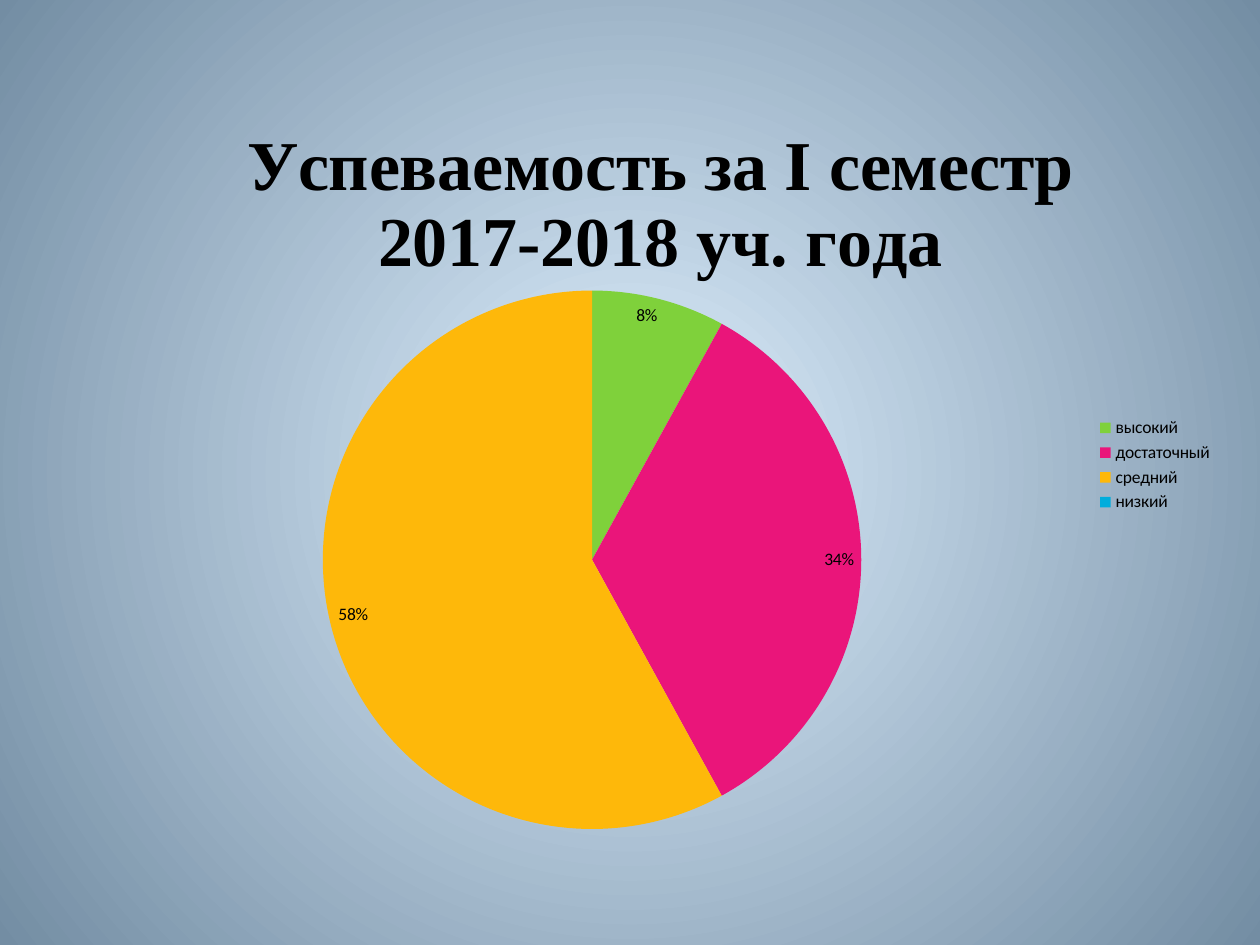
from dataclasses import dataclass

from lxml import etree
from pptx import Presentation
from pptx.chart.data import CategoryChartData
from pptx.dml.color import RGBColor
from pptx.enum.chart import XL_CHART_TYPE, XL_LABEL_POSITION, XL_LEGEND_POSITION
from pptx.oxml import parse_xml
from pptx.oxml.ns import nsdecls, qn
from pptx.util import Cm, Pt

PIE = XL_CHART_TYPE.PIE
INSIDE_END = XL_LABEL_POSITION.INSIDE_END
LEGEND_RIGHT = XL_LEGEND_POSITION.RIGHT

HEADING = "Успеваемость за І семестр 2017-2018 уч. года"
LEVELS = {"высокий ": 8, "достаточный": 34, "средний ": 58, "низкий": 0}


@dataclass(frozen=True)
class Theme:
    text: str = "000000"
    glow: str = "DFF0FF"
    edge: str = "738DA3"
    levels: tuple = ("7FD13B", "EA157A", "FEB80A", "00ADDC")
    body_font: str = "Calibri"
    heading_font: str = "Times New Roman"
    body_size: int = 10
    heading_size: int = 40


THEME = Theme()


def style_font(font, family, size, bold=False):
    font.name = family
    font.size = Pt(size)
    font.bold = bold
    font.color.rgb = RGBColor.from_string(THEME.text)


def paint_background(slide):
    fill = slide.background.fill
    fill.solid()
    properties = slide.element.cSld.find(qn("p:bg")).find(qn("p:bgPr"))
    gradient = parse_xml(
        f'<a:gradFill {nsdecls("a")} rotWithShape="1"><a:gsLst>'
        f'<a:gs pos="0"><a:srgbClr val="{THEME.glow}"/></a:gs>'
        f'<a:gs pos="100000"><a:srgbClr val="{THEME.edge}"/></a:gs></a:gsLst>'
        '<a:path path="circle"><a:fillToRect l="50000" t="50000" r="50000" b="50000"/>'
        '</a:path></a:gradFill>'
    )
    properties.replace(properties.find(qn("a:solidFill")), gradient)


def add_heading(chart):
    chart.has_title = True
    heading = chart.chart_title.text_frame.paragraphs[0].add_run()
    heading.text = HEADING
    style_font(heading.font, THEME.heading_font, THEME.heading_size, bold=True)
    chart.chart_title.include_in_layout = False


def add_legend(chart):
    chart.has_legend = True
    chart.legend.position = LEGEND_RIGHT
    chart.legend.include_in_layout = False


def label_shares(series):
    labels = series.data_labels
    labels.show_percentage = True
    labels.show_value = False
    labels.number_format = "0%"
    labels.number_format_is_linked = False
    labels.position = INSIDE_END
    style_font(labels.font, THEME.body_font, THEME.body_size)
    labels_xml = series._element.find(qn("c:dLbls"))
    empty_levels = [i for i, share in enumerate(LEVELS.values()) if share == 0]
    for place, index in enumerate(empty_levels):
        hidden = parse_xml(
            f'<c:dLbl {nsdecls("c")}><c:idx val="{index}"/><c:delete val="1"/></c:dLbl>'
        )
        labels_xml.insert(place, hidden)


def place_plot(chart, **fractions):
    plot_area = chart._chartSpace.chart.plotArea
    layout = plot_area.find(qn("c:layout"))
    if layout is None:
        layout = etree.Element(qn("c:layout"))
        plot_area.insert(0, layout)
    manual = etree.SubElement(layout, qn("c:manualLayout"))
    settings = {"layoutTarget": "inner", "xMode": "edge", "yMode": "edge", **fractions}
    for tag, value in settings.items():
        etree.SubElement(manual, qn(f"c:{tag}"), val=str(value))


def add_results_pie(slide):
    results = CategoryChartData()
    results.categories = list(LEVELS)
    results.add_series(HEADING, list(LEVELS.values()))
    chart = slide.shapes.add_chart(
        PIE, Cm(1.9), Cm(1.73), Cm(22.81), Cm(15.29), results
    ).chart
    style_font(chart.font, THEME.body_font, THEME.body_size)
    add_heading(chart)
    add_legend(chart)
    chart.plots[0].vary_by_categories = True
    series = chart.plots[0].series[0]
    for index, color in enumerate(THEME.levels):
        sector = series.points[index].format
        sector.fill.solid()
        sector.fill.fore_color.rgb = RGBColor.from_string(color)
        sector.line.fill.background()
    label_shares(series)
    place_plot(chart, x=0.2, y=0.27, w=0.48, h=0.71)


def main():
    deck = Presentation()
    deck.slide_width, deck.slide_height = Cm(25.4), Cm(19.05)
    slide = deck.slides.add_slide(deck.slide_layouts[6])
    paint_background(slide)
    add_results_pie(slide)
    deck.save("out.pptx")


if __name__ == "__main__":
    main()
